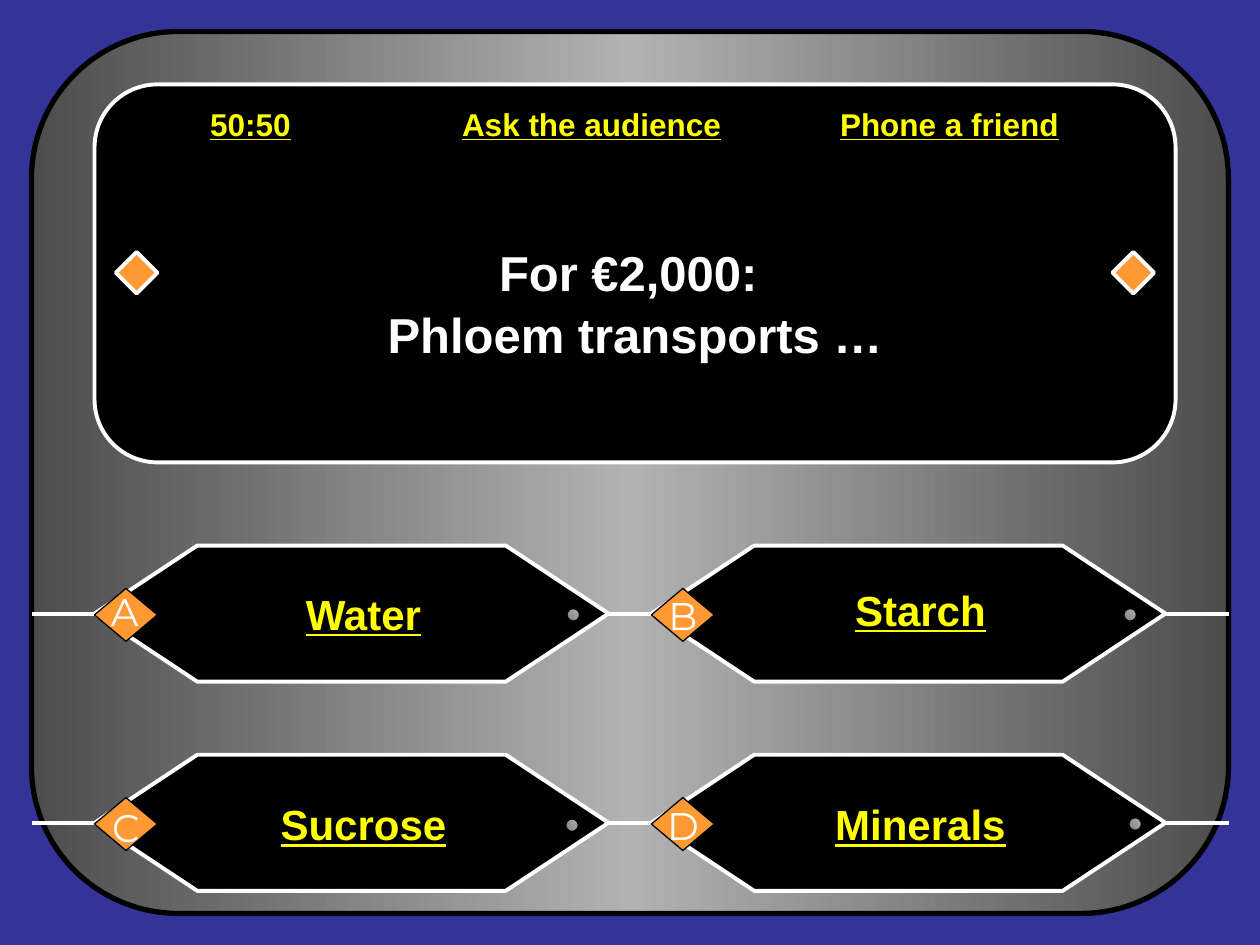
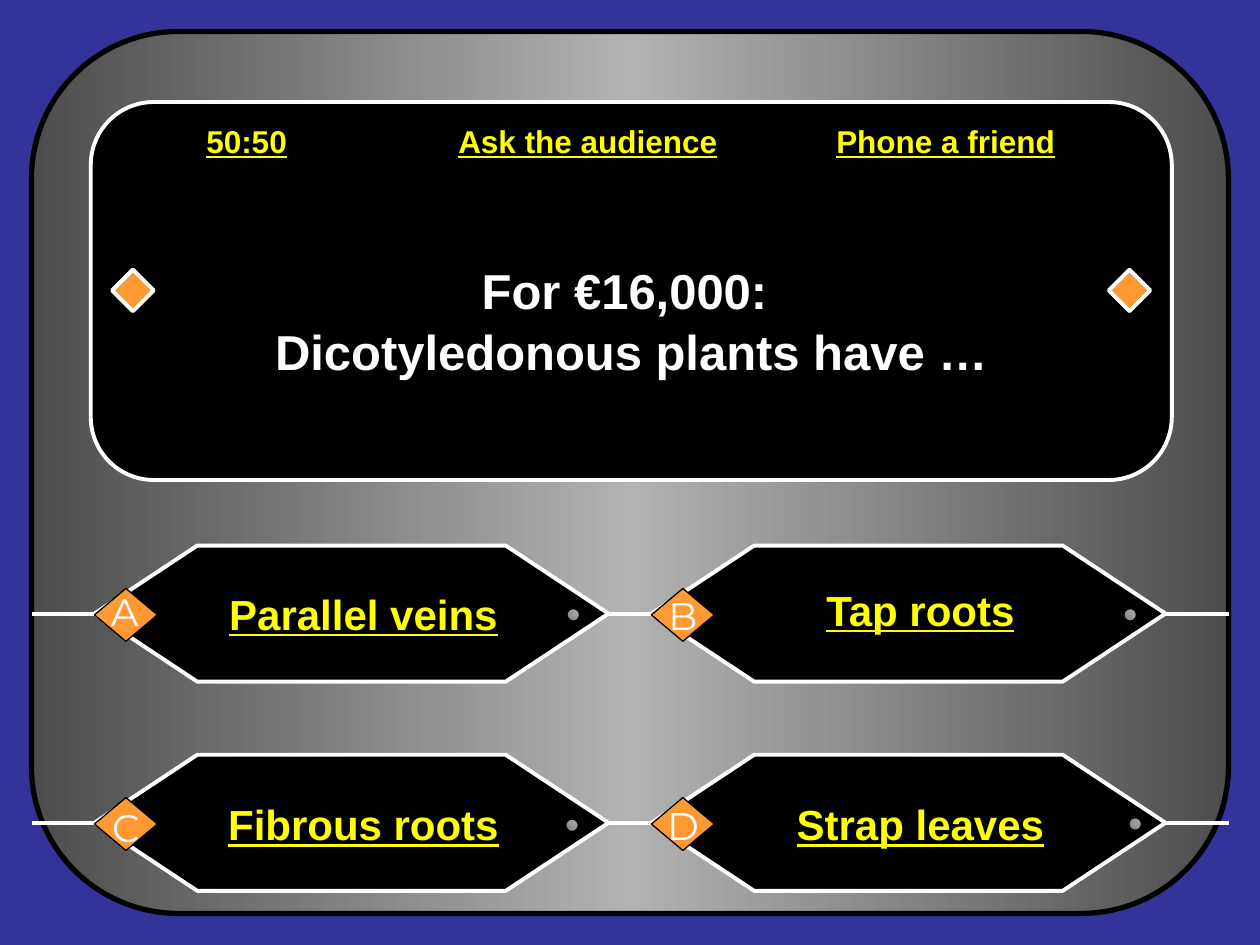
from dataclasses import dataclass

from lxml.etree import SubElement
from pptx import Presentation
from pptx.dml.color import RGBColor
from pptx.enum.shapes import MSO_CONNECTOR as Connector, MSO_SHAPE as Preset
from pptx.enum.text import MSO_ANCHOR as Anchor, PP_ALIGN as Align
from pptx.oxml.ns import qn
from pptx.util import Inches, Pt

BLUE = RGBColor(0x33, 0x33, 0x99)
BLACK = RGBColor(0x00, 0x00, 0x00)
WHITE = RGBColor(0xFF, 0xFF, 0xFF)
YELLOW = RGBColor(0xFF, 0xFF, 0x00)
ORANGE = RGBColor(0xFF, 0x99, 0x33)
DARK_GREY = RGBColor(0x4D, 0x4D, 0x4D)
MID_GREY = RGBColor(0x80, 0x80, 0x80)
LIGHT_GREY = RGBColor(0xB2, 0xB2, 0xB2)

SLIDE_WIDTH, SLIDE_HEIGHT = 10, 7.5
MARGIN = 0.25
COLUMNS = (0.75, 5.17)
ROWS = (4.33, 5.99)
ANSWER_WIDTH, ANSWER_HEIGHT = 4.08, 1.08
QUESTION_WIDTH, QUESTION_HEIGHT = 8.58, 3
BLANK_LAYOUT = 6


@dataclass
class Slot:
    letter: str
    column: int
    row: int
    letter_offset: tuple
    dot_offset: tuple
    text_top: float


SLOTS = (
    Slot("A", 0, 0, (0, 0.29), (3.75, 0.5), 0.05),
    Slot("B", 1, 0, (0.01, 0.32), (3.75, 0.5), 0.02),
    Slot("C", 0, 1, (0.01, 0.34), (3.74, 0.51), 0.06),
    Slot("D", 1, 1, (0.01, 0.33), (3.79, 0.5), 0.06),
)

QUESTIONS = (
    ((0.75, 0.67), "For €2,000: ", "Phloem transports …",
     ("Water", "Starch", "Sucrose", "Minerals")),
    ((0.72, 0.81), "For €16,000: ", "Dicotyledonous plants have …",
     ("Parallel veins", "Tap roots", "Fibrous roots", "Strap leaves")),
)


def add_preset(slide, preset, left, top, width, height, fill=None, line=None, weight=0.75):
    shape = slide.shapes.add_shape(
        preset, Inches(left), Inches(top), Inches(width), Inches(height))
    shape.shadow.inherit = False
    if fill is None:
        shape.fill.background()
    else:
        shape.fill.solid()
        shape.fill.fore_color.rgb = fill
    if line is None:
        shape.line.fill.background()
    else:
        shape.line.color.rgb = line
        shape.line.width = Pt(weight)
    return shape


def set_gradient(shape, colors, angle):
    shape.fill.gradient()
    shape.fill.gradient_angle = angle
    stops = shape._element.spPr.find(".//" + qn("a:gsLst"))
    for stop in list(stops):
        stops.remove(stop)
    for index, color in enumerate(colors):
        position = 100000 * index // (len(colors) - 1)
        stop = SubElement(stops, qn("a:gs"), pos=str(position))
        SubElement(stop, qn("a:srgbClr"), val=str(color))


def set_font(paragraph, size, color, name="Arial", bold=True, underline=None):
    paragraph.alignment = Align.CENTER
    font = paragraph.font
    font.name, font.size, font.bold, font.underline = name, Pt(size), bold, underline
    font.color.rgb = color


def add_wire(slide, start, end, y):
    wire = slide.shapes.add_connector(
        Connector.STRAIGHT, Inches(start), Inches(y), Inches(end), Inches(y))
    wire.line.color.rgb = WHITE
    wire.line.width = Pt(2.25)
    SubElement(wire._element.spPr, qn("a:effectLst"))
    return wire


def add_answer_row(slide, top):
    left_box, right_box = [
        add_preset(slide, Preset.FLOWCHART_PREPARATION, left, top,
                   ANSWER_WIDTH, ANSWER_HEIGHT, BLACK, WHITE, 2.25)
        for left in COLUMNS]
    middle = top + ANSWER_HEIGHT / 2
    left_end, right_end = (left + ANSWER_WIDTH for left in COLUMNS)
    add_wire(slide, MARGIN, COLUMNS[0], middle).end_connect(left_box, 1)
    link = add_wire(slide, left_end, COLUMNS[1], middle)
    link.begin_connect(left_box, 3)
    link.end_connect(right_box, 1)
    add_wire(slide, right_end, SLIDE_WIDTH - MARGIN, middle).begin_connect(right_box, 3)


def add_answer(slide, slot, answer):
    left, top = COLUMNS[slot.column], ROWS[slot.row]

    dot_x, dot_y = slot.dot_offset
    dot = add_preset(slide, Preset.FLOWCHART_CONNECTOR, left + dot_x, top + dot_y,
                     0.1, 0.1, MID_GREY, BLACK)
    set_gradient(dot, (MID_GREY, LIGHT_GREY), 45)

    add_preset(slide, Preset.DIAMOND, left, top + 0.34, 0.5, 0.42, ORANGE, BLACK)

    letter_x, letter_y = slot.letter_offset
    letter_box = slide.shapes.add_textbox(
        Inches(left + letter_x), Inches(top + letter_y), Inches(0.48), Inches(0.47))
    letter_box.text_frame.word_wrap = True
    letter_box.text_frame.text = slot.letter
    set_font(letter_box.text_frame.paragraphs[0], 22, WHITE, "Montserrat", False)

    button = add_preset(slide, Preset.ACTION_BUTTON_CUSTOM,
                        left + 0.47, top + slot.text_top, 3.33, 0.98)
    frame = button.text_frame
    frame.word_wrap = False
    frame.vertical_anchor = Anchor.MIDDLE
    frame.text = answer
    set_font(frame.paragraphs[0], 24, YELLOW, underline=True)


def add_question(slide, left, top, prize, question):
    panel = add_preset(slide, Preset.FLOWCHART_ALTERNATE_PROCESS, left, top,
                       QUESTION_WIDTH, QUESTION_HEIGHT, BLACK, WHITE, 2.25)
    frame = panel.text_frame
    frame.word_wrap = False
    frame.vertical_anchor = Anchor.MIDDLE
    frame.margin_top = Inches(0.52)
    frame.text = f"{prize}\n{question}"
    for paragraph in frame.paragraphs:
        set_font(paragraph, 28, WHITE)
    frame.paragraphs[1].space_before = Pt(1.5)
    for offset in (0.17, 8.08):
        add_preset(slide, Preset.DIAMOND, left + offset, top + 1.33,
                   0.33, 0.33, ORANGE, WHITE, 2.25)


def add_lifelines(slide, left, top):
    box = slide.shapes.add_textbox(
        Inches(left + 0.03), Inches(top + 0.01), Inches(8.51), Inches(0.6))
    frame = box.text_frame
    frame.word_wrap = False
    frame.vertical_anchor = Anchor.MIDDLE
    paragraph = frame.paragraphs[0]
    tabs = SubElement(paragraph._p.get_or_add_pPr(), qn("a:tabLst"))
    for inch in range(1, 6):
        SubElement(tabs, qn("a:tab"), pos=str(Inches(inch)), algn="l")
    set_font(paragraph, 18, YELLOW)
    for text in ("50:50", "\t\t", "Ask the audience", "\t", "Phone a friend"):
        run = paragraph.add_run()
        run.text = text
        run.font.underline = not text.isspace()


def add_backdrop(slide):
    backdrop = add_preset(
        slide, Preset.FLOWCHART_ALTERNATE_PROCESS, MARGIN, MARGIN,
        SLIDE_WIDTH - 2 * MARGIN, SLIDE_HEIGHT - 2 * MARGIN, DARK_GREY, BLACK, 3)
    set_gradient(backdrop, (DARK_GREY, LIGHT_GREY, DARK_GREY), 0)


def add_question_slide(presentation, corner, prize, question, answers):
    slide = presentation.slides.add_slide(presentation.slide_layouts[BLANK_LAYOUT])
    add_backdrop(slide)
    for top in ROWS:
        add_answer_row(slide, top)
    add_question(slide, *corner, prize, question)
    for slot, answer in zip(SLOTS, answers):
        add_answer(slide, slot, answer)
    add_lifelines(slide, *corner)


def main():
    presentation = Presentation()
    presentation.slide_width = Inches(SLIDE_WIDTH)
    presentation.slide_height = Inches(SLIDE_HEIGHT)
    background = presentation.slide_master.background.fill
    background.solid()
    background.fore_color.rgb = BLUE
    for content in QUESTIONS:
        add_question_slide(presentation, *content)
    presentation.save("out.pptx")


if __name__ == "__main__":
    main()
